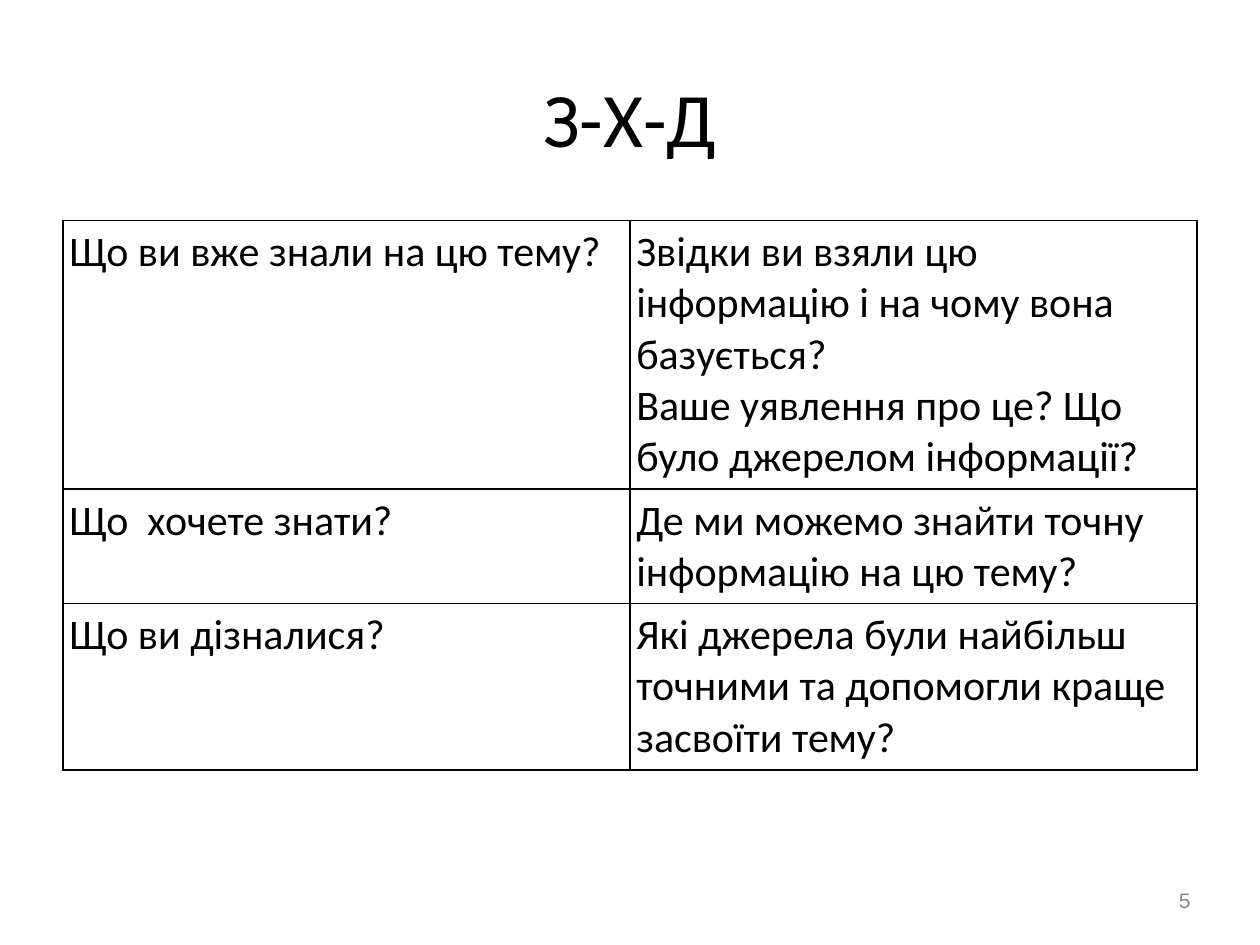
from lxml import etree
from pptx import Presentation
from pptx.dml.color import RGBColor
from pptx.enum.text import MSO_ANCHOR, PP_ALIGN
from pptx.oxml.ns import qn
from pptx.util import Inches, Pt

MIDDLE = MSO_ANCHOR.MIDDLE
CENTER, RIGHT, LEFT = PP_ALIGN.CENTER, PP_ALIGN.RIGHT, PP_ALIGN.LEFT
COLORS = {"text": "000000", "border": "000000", "number": "888888"}
PAD = Inches(0.05)

ROWS = [
    ("Що ви вже знали на цю тему?",
     "Звідки ви взяли цю інформацію і на чому вона базується?\v"
     "Ваше уявлення про це? Що було джерелом інформації?"),
    ("Що  хочете знати?", "Де ми можемо знайти точну інформацію на цю тему?"),
    ("Що ви дізналися?",
     "Які джерела були найбільш точними та допомогли краще засвоїти тему?"),
]
HEIGHTS = [2.13, 0.91, 1.32]


def set_text(frame, text, size, font="Calibri", color="text", align=LEFT):
    frame.text = text
    for para in frame.paragraphs:
        para.alignment = align
        for run in para.runs:
            run.font.size = Pt(size)
            run.font.name = font
            run.font.color.rgb = RGBColor.from_string(COLORS[color])


def set_pad(item):
    item.margin_left = item.margin_right = PAD
    item.margin_top = item.margin_bottom = PAD


def add_label(slide, text, left, top, width, height, wrap=True, **style):
    box = slide.shapes.add_textbox(
        Inches(left), Inches(top), Inches(width), Inches(height))
    frame = box.text_frame
    frame.word_wrap = wrap
    frame.vertical_anchor = MIDDLE
    set_pad(frame)
    set_text(frame, text, **style)


def add_border(cell):
    props = cell._tc.get_or_add_tcPr()
    for side in ("a:lnL", "a:lnR", "a:lnT", "a:lnB"):
        line = etree.SubElement(props, qn(side), w=str(Pt(1)))
        fill = etree.SubElement(line, qn("a:solidFill"))
        etree.SubElement(fill, qn("a:srgbClr"), val=COLORS["border"])


def add_grid(slide, left, top, width):
    shape = slide.shapes.add_table(
        len(ROWS), len(ROWS[0]), Inches(left), Inches(top),
        Inches(width), Inches(sum(HEIGHTS)))
    table = shape.table
    table.first_row = table.horz_banding = False
    for r, texts in enumerate(ROWS):
        table.rows[r].height = Inches(HEIGHTS[r])
        for c, text in enumerate(texts):
            cell = table.cell(r, c)
            set_pad(cell)
            set_text(cell.text_frame, text, size=24)
            # Borders come before the fill in the cell properties
            add_border(cell)
            cell.fill.background()


def main():
    deck = Presentation()
    deck.slide_width, deck.slide_height = Inches(10), Inches(7.5)
    slide = deck.slides.add_slide(deck.slide_layouts[6])

    # Title
    add_label(slide, "З-Х-Д", 0.5, 0.3, 9, 1.25, size=44, align=CENTER)
    # Question table
    add_grid(slide, 0.5, 1.75, 9)
    # Slide number
    add_label(slide, "5", 9.3, 7, 0.2, 0.29, wrap=False,
              size=12, font="Arial", color="number", align=RIGHT)

    deck.save("out.pptx")


if __name__ == "__main__":
    main()
